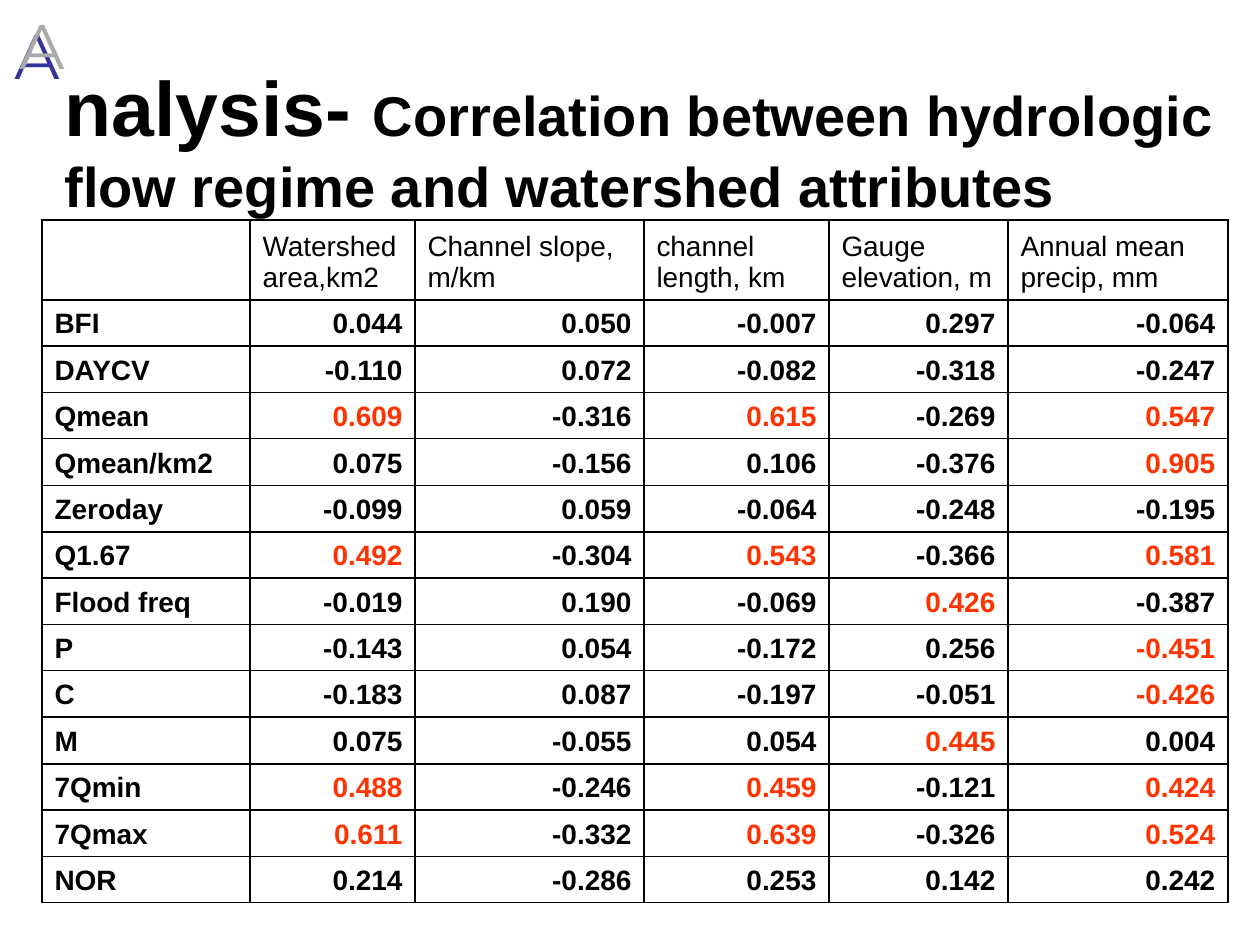
from lxml import etree
from pptx import Presentation, util as u
from pptx.dml.color import RGBColor
from pptx.enum import text
from pptx.oxml import ns

BLACK = RGBColor(0x00, 0x00, 0x00)
RED = RGBColor(0xFF, 0x33, 0x00)
NAVY = RGBColor(0x33, 0x33, 0x99)
GRAY = RGBColor(0xAA, 0xAA, 0xAA)

SCALE = 914400 // 126
SIZE = (1260, 945)
STRONG = 0.4

TITLE_BOX = (52, 53, 1207, 173)
TITLE = [("nalysis- ", 44),
         ("Correlation between hydrologic flow regime and watershed attributes", 32)]
INITIALS = [((2, 10, 53, 136), NAVY), ((0, 0, 84, 158), GRAY)]

TABLE_AT = (42, 220)
COL_WIDTHS = [208, 165, 229, 185, 179, 220]
HEADER_HEIGHT, BODY_HEIGHT = 80, 600
HEADERS = ["", "Watershed area,km2", "Channel slope, m/km", "channel length, km",
           "Gauge elevation, m", "Annual mean precip, mm"]
CORRELATIONS = [
    ("BFI", 0.044, 0.050, -0.007, 0.297, -0.064),
    ("DAYCV", -0.110, 0.072, -0.082, -0.318, -0.247),
    ("Qmean", 0.609, -0.316, 0.615, -0.269, 0.547),
    ("Qmean/km2", 0.075, -0.156, 0.106, -0.376, 0.905),
    ("Zeroday", -0.099, 0.059, -0.064, -0.248, -0.195),
    ("Q1.67", 0.492, -0.304, 0.543, -0.366, 0.581),
    ("Flood freq", -0.019, 0.190, -0.069, 0.426, -0.387),
    ("P", -0.143, 0.054, -0.172, 0.256, -0.451),
    ("C", -0.183, 0.087, -0.197, -0.051, -0.426),
    ("M", 0.075, -0.055, 0.054, 0.445, 0.004),
    ("7Qmin", 0.488, -0.246, 0.459, -0.121, 0.424),
    ("7Qmax", 0.611, -0.332, 0.639, -0.326, 0.524),
    ("NOR", 0.214, -0.286, 0.253, 0.142, 0.242),
]


def px(n):
    return u.Emu(n * SCALE)


def add_run(p, words, size, color=BLACK, name="Arial", bold=False):
    r = p.add_run()
    r.text = words
    for key, value in {"size": u.Pt(size), "name": name, "bold": bold}.items():
        setattr(r.font, key, value)
    r.font.color.rgb = color
    return r


def add_box(slide, box, wrap):
    tf = slide.shapes.add_textbox(*map(px, box)).text_frame
    tf.word_wrap = wrap
    return tf


def add_borders(cell):
    tcPr = cell._tc.get_or_add_tcPr()
    for side in ("lnL", "lnR", "lnT", "lnB"):
        ln = etree.SubElement(tcPr, ns.qn(f"a:{side}"), w=str(u.Pt(1)))
        fill = etree.SubElement(ln, ns.qn("a:solidFill"))
        etree.SubElement(fill, ns.qn("a:srgbClr"), val=str(BLACK))


def fill_cell(cell, value, bold):
    add_borders(cell)
    cell.fill.background()
    cell.vertical_anchor = text.MSO_ANCHOR.BOTTOM
    p = cell.text_frame.paragraphs[0]
    if isinstance(value, float):
        p.alignment = text.PP_ALIGN.RIGHT
        color = RED if abs(value) > STRONG else BLACK
        add_run(p, f"{value:.3f}", 16, color, bold=bold)
    elif value:
        add_run(p, value, 16, bold=bold)


def add_correlations(slide):
    rows = [HEADERS, *CORRELATIONS]
    n = len(CORRELATIONS)
    edges = [round(BODY_HEIGHT * i / n) for i in range(n + 1)]
    heights = [HEADER_HEIGHT] + [b - a for a, b in zip(edges, edges[1:])]
    frame = slide.shapes.add_table(len(rows), len(HEADERS), *map(
        px, (*TABLE_AT, sum(COL_WIDTHS), sum(heights))))
    table = frame.table
    table.first_row = table.horz_banding = False
    for col, width in zip(table.columns, COL_WIDTHS):
        col.width = px(width)
    for i, (row, height) in enumerate(zip(table.rows, heights)):
        row.height = px(height)
        for cell, value in zip(row.cells, rows[i]):
            fill_cell(cell, value, bold=i > 0)


def main():
    prs = Presentation()
    prs.slide_width, prs.slide_height = map(px, SIZE)
    slide = prs.slides.add_slide(prs.slide_layouts[6])

    p = add_box(slide, TITLE_BOX, True).paragraphs[0]
    for words, size in TITLE:
        add_run(p, words, size, bold=True)

    for box, color in INITIALS:
        p = add_box(slide, box, False).paragraphs[0]
        p.alignment = text.PP_ALIGN.CENTER
        r = add_run(p, "A", 36, color, "Montserrat")
        r.font._element.set("spc", "720")

    add_correlations(slide)
    prs.save("out.pptx")


if __name__ == "__main__":
    main()
